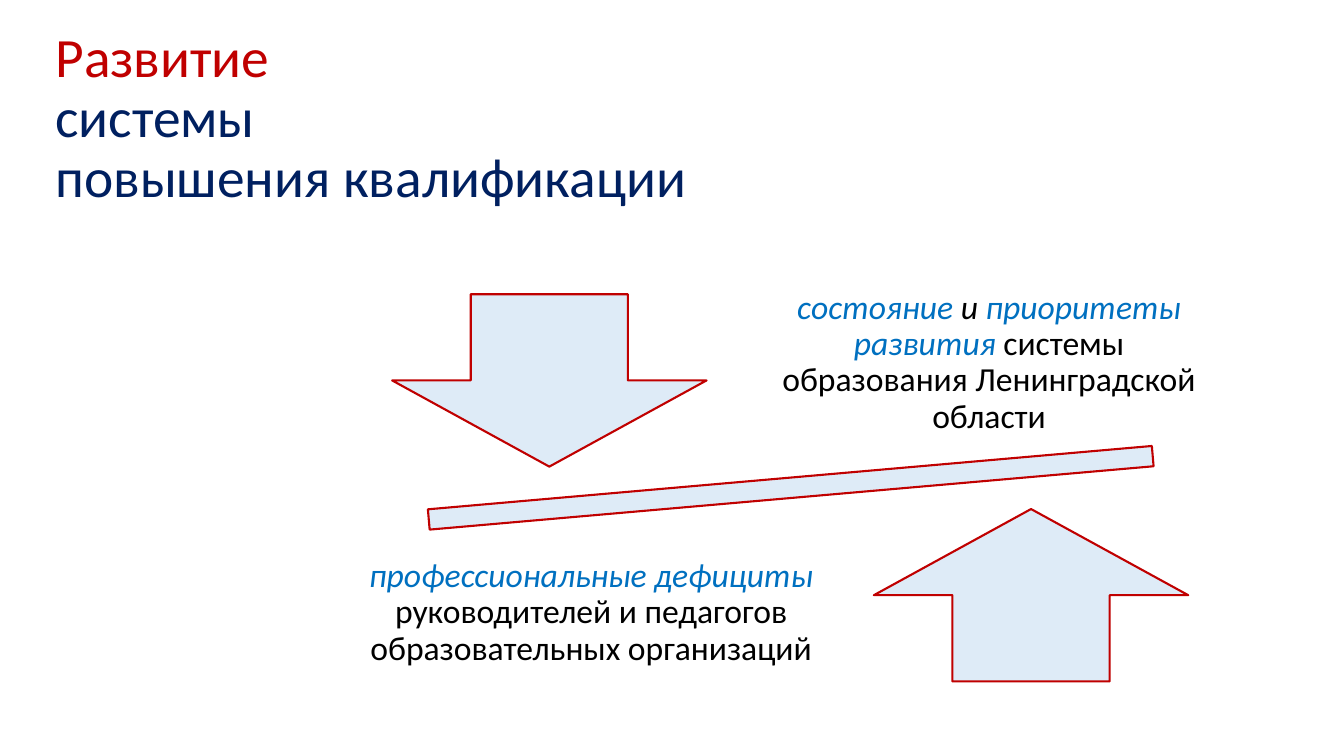
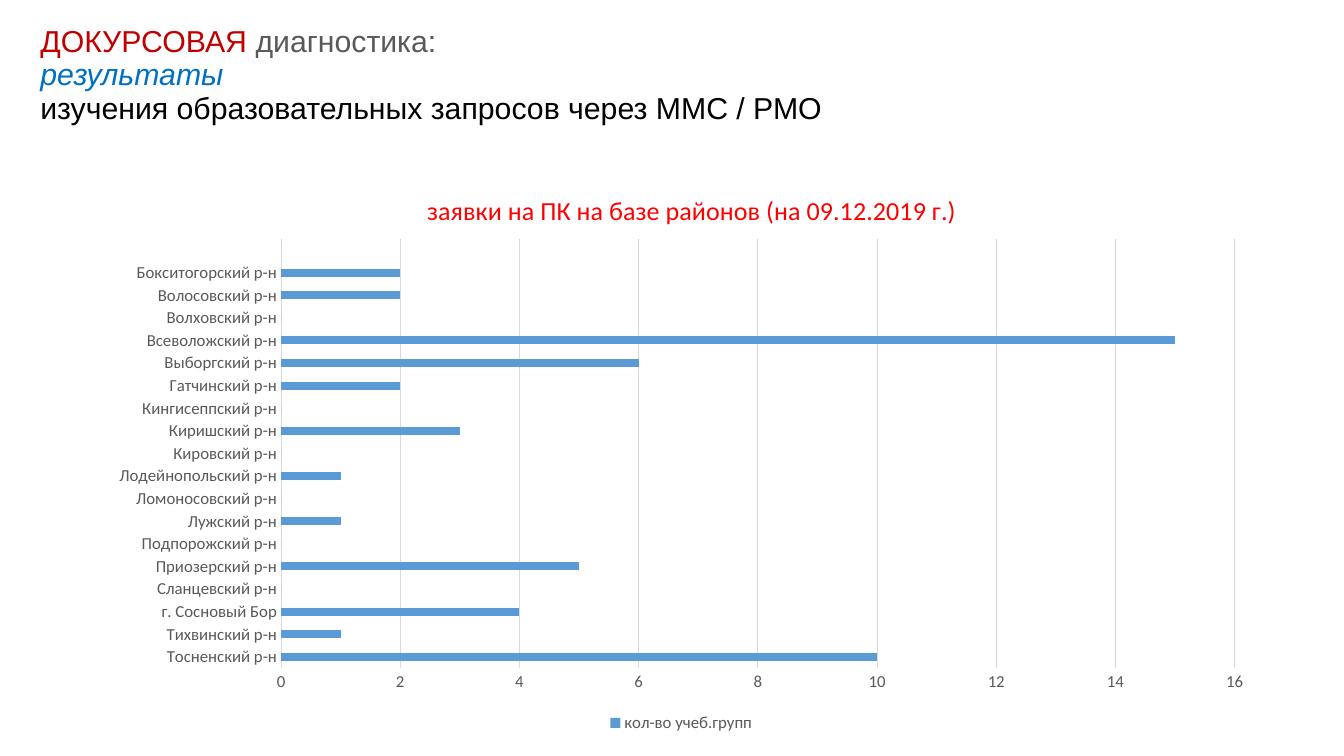
import lxml.etree
import pptx
import pptx.chart.data
import pptx.dml.color
import pptx.enum.chart
import pptx.enum.shapes
import pptx.enum.text
import pptx.util

Pt = pptx.util.Pt
RGBColor = pptx.dml.color.RGBColor
Shape = pptx.enum.shapes.MSO_SHAPE
Align = pptx.enum.text.PP_ALIGN
Anchor = pptx.enum.text.MSO_ANCHOR
ChartEnum = pptx.enum.chart

COLORS = {
    "red": "C00000",
    "navy": "002060",
    "blue": "0070C0",
    "black": "000000",
    "gray": "595959",
    "pale": "DEEBF7",
    "bar": "5B9BD5",
    "grid": "D9D9D9",
    "chart title": "FF0000",
}
COLORS = {name: RGBColor.from_string(value) for name, value in COLORS.items()}


def write_lines(shape, lines, frame_format, font_format, alignment, spacing=0.9):
    """Fill a shape with one paragraph per line of (text, color, italic) runs."""
    frame = shape.text_frame
    frame.word_wrap = True
    frame.auto_size = pptx.enum.text.MSO_AUTO_SIZE.NONE
    for attribute, value in frame_format.items():
        setattr(frame, attribute, value)
    for index, line in enumerate(lines):
        paragraph = frame.add_paragraph() if index else frame.paragraphs[0]
        paragraph.alignment = alignment
        paragraph.line_spacing = spacing
        for text, color, italic in line:
            run = paragraph.add_run()
            run.text = text
            run.font.italic = italic
            run.font.color.rgb = COLORS[color]
            for attribute, value in font_format.items():
                setattr(run.font, attribute, value)


def place_chart_part(element, position, modes, fractions):
    """Give a chart title or plot area a manual layout in fractions of the chart."""
    namespace = "{http://schemas.openxmlformats.org/drawingml/2006/chart}"
    for old_layout in element.findall(namespace + "layout"):
        element.remove(old_layout)
    layout = lxml.etree.Element(namespace + "layout")
    manual = lxml.etree.SubElement(layout, namespace + "manualLayout")
    for tag, value in {**modes, **fractions}.items():
        lxml.etree.SubElement(manual, namespace + tag).set("val", str(value))
    element.insert(position, layout)


presentation = pptx.Presentation()
presentation.slide_width = Pt(960)
presentation.slide_height = Pt(540)

titles = [
    {
        "box": (32.4, 26.6, 828, 117.4),
        "lines": [
            [("Развитие", "red", False)],
            [("системы", "navy", False)],
            [("повышения квалификации", "navy", False)],
        ],
        "font": {"name": "Calibri", "size": Pt(39.6)},
        "anchor": Anchor.MIDDLE,
        "spacing": 0.9,
    },
    {
        "box": (21.6, 14.4, 828, 103.7),
        "lines": [
            [("ДОКУРСОВАЯ ", "red", False), ("диагностика:", "gray", False)],
            [("результаты", "blue", True)],
            [("изучения образовательных запросов через ММС / РМО", "black", False)],
        ],
        "font": {"name": "Arial", "size": Pt(21.6)},
        "anchor": Anchor.TOP,
        "spacing": 0.93,
    },
]
slides = []
for title in titles:
    slide = presentation.slides.add_slide(presentation.slide_layouts[5])
    shape = slide.shapes.title
    shape.left, shape.top, shape.width, shape.height = map(Pt, title["box"])
    write_lines(shape, title["lines"], {"vertical_anchor": title["anchor"]},
                title["font"], Align.LEFT, title["spacing"])
    slides.append(slide)
balance_slide, chart_slide = slides

# Balance of needs and priorities
balance = balance_slide.shapes.add_group_shape()
balance_shapes = [
    (Shape.MATH_MINUS, (211.7, 317.5, 706.3, 61.9), 355),
    (Shape.DOWN_ARROW, (280.1, 210.2, 224.6, 123.1), 0),
    (Shape.UP_ARROW, (624.2, 363.6, 224.6, 123.1), 0),
]
for kind, box, rotation in balance_shapes:
    shape = balance.shapes.add_shape(kind, *map(Pt, box))
    shape.rotation = rotation
    shape.shadow.inherit = False
    shape.fill.solid()
    shape.fill.fore_color.rgb = COLORS["pale"]
    shape.line.color.rgb = COLORS["red"]
    shape.line.width = Pt(1.5)

label_format = {"vertical_anchor": Anchor.MIDDLE}
for side in ("left", "top", "right", "bottom"):
    label_format["margin_" + side] = Pt(13)
labels = [
    ((544, 194.4, 325, 129.6), [
        ("состояние ", "blue", True),
        ("и", "black", True),
        (" приоритеты развития ", "blue", True),
        ("системы образования Ленинградской области", "black", False),
    ]),
    ((247.7, 373, 349.2, 129.6), [
        ("профессиональные дефициты ", "blue", True),
        ("руководителей и педагогов образовательных организаций", "black", False),
    ]),
]
for box, runs in labels:
    shape = balance.shapes.add_textbox(*map(Pt, box))
    write_lines(shape, [runs], label_format, {"name": "Calibri", "size": Pt(24)}, Align.CENTER)

# Requests by district
requests = {
    "Тосненский р-н": 10,
    "Тихвинский р-н": 1,
    "г. Сосновый Бор": 4,
    "Сланцевский р-н": 0,
    "Приозерский р-н": 5,
    "Подпорожский р-н": 0,
    "Лужский р-н": 1,
    "Ломоносовский р-н": 0,
    "Лодейнопольский р-н": 1,
    "Кировский р-н": 0,
    "Киришский р-н": 3,
    "Кингисеппский р-н": 0,
    "Гатчинский р-н": 2,
    "Выборгский р-н": 6,
    "Всеволожский р-н": 15,
    "Волховский р-н": 0,
    "Волосовский р-н": 2,
    "Бокситогорский р-н": 2,
    "": None,
}
chart_data = pptx.chart.data.CategoryChartData()
chart_data.categories = list(requests)
chart_data.add_series("кол-во учеб.групп", list(requests.values()))
chart = chart_slide.shapes.add_chart(
    ChartEnum.XL_CHART_TYPE.BAR_CLUSTERED, *map(Pt, (66.2, 117.4, 841, 409)), chart_data
).chart

plot = chart.plots[0]
plot.gap_width = 182
plot.vary_by_categories = False
bars = plot.series[0].format.fill
bars.solid()
bars.fore_color.rgb = COLORS["bar"]

category_axis, value_axis = chart.category_axis, chart.value_axis
for axis in (category_axis, value_axis):
    axis.major_tick_mark = axis.minor_tick_mark = ChartEnum.XL_TICK_MARK.NONE
category_axis.has_major_gridlines = False
value_axis.has_major_gridlines = True
value_axis.minimum_scale, value_axis.maximum_scale = 0, 16
value_axis.major_unit = 2
value_axis.format.line.fill.background()
for line in (category_axis.format.line, value_axis.major_gridlines.format.line):
    line.color.rgb = COLORS["grid"]
    line.width = Pt(0.75)

chart.has_legend = True
chart.legend.position = ChartEnum.XL_LEGEND_POSITION.BOTTOM
chart.legend.include_in_layout = False

chart.has_title = True
title_frame = chart.chart_title.text_frame
title_frame.text = "заявки на ПК на базе районов (на 09.12.2019 г.)"
title_font = title_frame.paragraphs[0].runs[0].font

chart_fonts = [
    (title_font, 18.6, "chart title"),
    (category_axis.tick_labels.font, 12, "gray"),
    (value_axis.tick_labels.font, 12, "gray"),
    (chart.legend.font, 12, "gray"),
]
for font, size, color in chart_fonts:
    font.name = "Calibri"
    font.size = Pt(size)
    font.bold = False
    font.color.rgb = COLORS[color]

edge_modes = {"xMode": "edge", "yMode": "edge"}
place_chart_part(chart.chart_title.element, 1, edge_modes, {"x": 0.28, "y": 0.04})
place_chart_part(chart.element.xpath("c:chart/c:plotArea")[0], 0,
                 {"layoutTarget": "inner", **edge_modes},
                 {"x": 0.16, "y": 0.13, "w": 0.81, "h": 0.75})

presentation.save("out.pptx")
